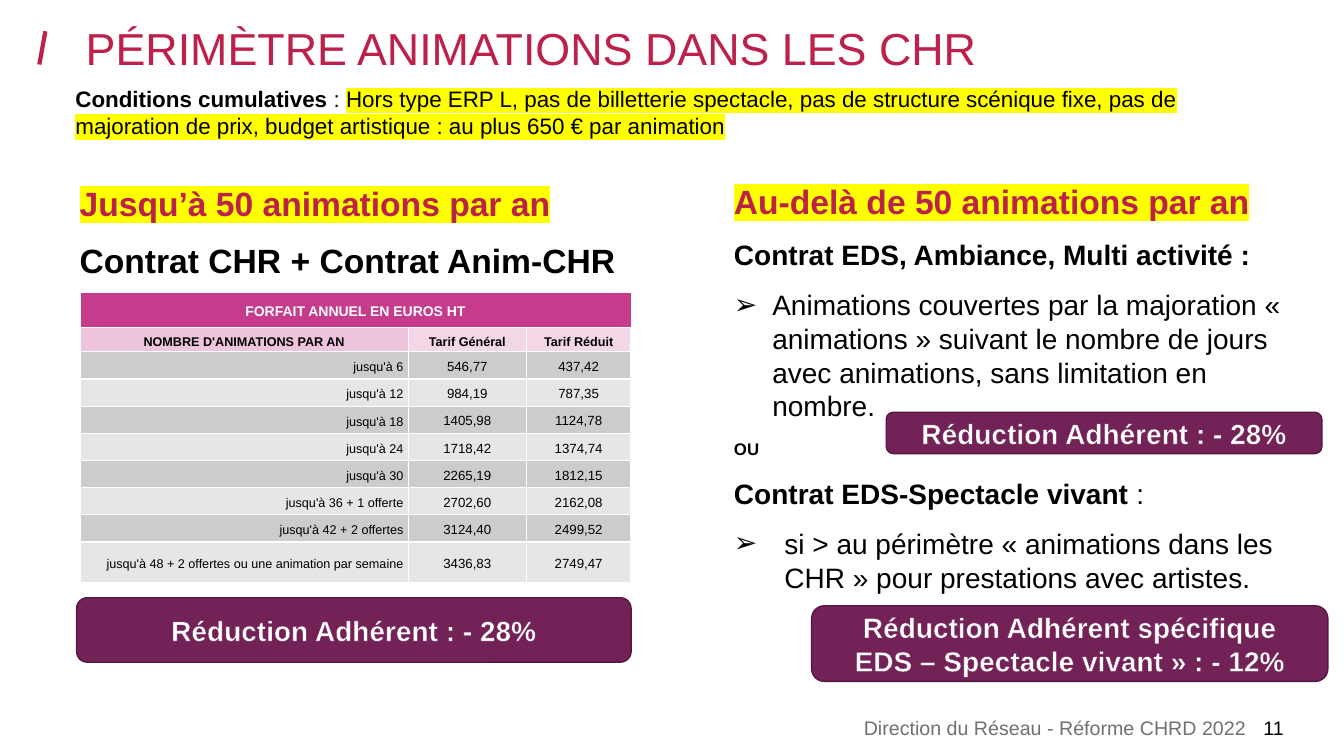
from dataclasses import dataclass

from pptx import Presentation
from pptx import util as u
from pptx.dml.color import RGBColor
from pptx.enum import shapes, text
from pptx.oxml import ns, xmlchemy

PX = 9144


@dataclass(frozen=True)
class Theme:
    font: str = "Arial"
    crimson: str = "BC204B"
    heading: str = "BC214A"
    black: str = "000000"
    white: str = "FFFFFF"
    grey: str = "6F7072"
    yellow: str = "FFFF00"
    plum: str = "722257"
    plum_edge: str = "541940"
    table_title: str = "C63B8B"
    label_head: str = "EEC4DC"
    price_head: str = "F3D7E7"
    bands: tuple = ("CCCCCC", "E6E6E6")
    title: float = 32
    section: float = 24
    body: float = 20
    condition: float = 16
    footer: float = 14
    small: float = 12
    table_head: float = 10
    table_label: float = 9
    table_price: float = 9.5


THEME = Theme()
HEADING = dict(size=THEME.section, color=THEME.heading, bold=True, highlight=THEME.yellow)
BOLD = dict(size=THEME.body, bold=True)
PLAIN = dict(size=THEME.body)
MEMBER_DISCOUNT = "Réduction Adhérent : - 28%"
RATES = [
    ("jusqu'à 6", "546,77", "437,42"),
    ("jusqu'à 12", "984,19", "787,35"),
    ("jusqu'à 18", "1405,98", "1124,78"),
    ("jusqu'à 24", "1718,42", "1374,74"),
    ("jusqu'à 30", "2265,19", "1812,15"),
    ("jusqu'à 36 + 1 offerte", "2702,60", "2162,08"),
    ("jusqu'à 42 + 2 offertes", "3124,40", "2499,52"),
    ("jusqu'à 48 + 2 offertes ou une animation par semaine", "3436,83", "2749,47"),
]


def px(*lengths):
    return [u.Emu(length * PX) for length in lengths]


def set_values(target, values):
    for name, value in values.items():
        setattr(target, name, value)


def add_xml(parent, tag, **attributes):
    element = xmlchemy.OxmlElement(tag)
    for name, value in attributes.items():
        element.set(name, str(value))
    parent.append(element)
    return element


def add_solid(parent, color):
    add_xml(add_xml(parent, "a:solidFill"), "a:srgbClr", val=color)


def add_run(paragraph, words, size, color=THEME.black, bold=False, highlight=None, outline=None):
    run = paragraph.add_run()
    run.text = words
    set_values(run.font, dict(size=u.Pt(size), bold=bold))
    run.font.color.rgb = RGBColor.from_string(color)
    properties = run.font.fill._xPr
    if highlight:
        add_xml(add_xml(properties, "a:highlight"), "a:srgbClr", val=highlight)
    if outline:
        line = add_xml(properties, "a:ln", w=6600)
        add_solid(line, outline)
        properties.insert(0, line)
    run.font.name = THEME.font


def write(frame, paragraphs, gap=0):
    for index, (runs, values, indent) in enumerate(paragraphs):
        paragraph = frame.add_paragraph() if index else frame.paragraphs[0]
        set_values(paragraph, values)
        if index and gap:
            paragraph.space_before = u.Pt(gap)
        if indent:
            properties = paragraph._p.get_or_add_pPr()
            properties.set("marL", str(indent * PX))
            properties.set("indent", str(-indent * PX))
            add_xml(properties, "a:buFont", typeface=THEME.font)
            add_xml(properties, "a:buChar", char="➢")
        for words, style in runs:
            for number, line in enumerate(words.split("\n")):
                if number:
                    paragraph.add_line_break()
                add_run(paragraph, line, **style)


def line_of(words, style, indent=0, **values):
    return [(words, style)], values, indent


def add_text(slide, box, paragraphs, gap=0, inset=(0, 0)):
    frame = slide.shapes.add_textbox(*px(*box)).text_frame
    across, down = px(*inset)
    set_values(frame, dict(word_wrap=True, margin_left=across, margin_right=across,
                           margin_top=down, margin_bottom=down))
    write(frame, paragraphs, gap)


def add_badge(slide, box, words):
    badge = slide.shapes.add_shape(shapes.MSO_SHAPE.ROUNDED_RECTANGLE, *px(*box))
    badge.shadow.inherit = False
    badge.fill.solid()
    badge.fill.fore_color.rgb = RGBColor.from_string(THEME.plum)
    badge.line.color.rgb = RGBColor.from_string(THEME.plum_edge)
    badge.line.width = u.Pt(1)
    set_values(badge.text_frame, dict(word_wrap=True, vertical_anchor=text.MSO_ANCHOR.MIDDLE))
    style = dict(BOLD, color=THEME.white, outline=THEME.plum)
    write(badge.text_frame, [line_of(words, style, alignment=text.PP_ALIGN.CENTER)])


def fill_cell(cell, words, fill, style, alignment, edges):
    side, none = px(5, 0)
    set_values(cell, dict(margin_left=side, margin_right=side, margin_top=none,
                          margin_bottom=none, vertical_anchor=text.MSO_ANCHOR.MIDDLE))
    properties = cell._tc.get_or_add_tcPr()
    for edge in "LRTB":
        width = 1.5 if edge in edges else 1
        add_solid(add_xml(properties, f"a:ln{edge}", w=int(u.Pt(width))), THEME.white)
    cell.fill.solid()
    cell.fill.fore_color.rgb = RGBColor.from_string(fill)
    write(cell.text_frame, [line_of(words, style, alignment=alignment, line_spacing=u.Pt(13))])


def add_rate_table(slide, box):
    widths = [326, 117, 104]
    heights = [35, 24] + [27] * (len(RATES) - 1) + [40]
    table = slide.shapes.add_table(len(heights), len(widths), *px(*box)).table
    for column, width in zip(table.columns, px(*widths)):
        column.width = width
    for row, height in zip(table.rows, px(*heights)):
        row.height = height
    center, right = text.PP_ALIGN.CENTER, text.PP_ALIGN.RIGHT
    table.cell(0, 0).merge(table.cell(0, 2))
    fill_cell(table.cell(0, 0), "FORFAIT ANNUEL EN EUROS HT", THEME.table_title,
              dict(size=THEME.table_head, color=THEME.white, bold=True), center, "L")
    edges = ("L", "", "R")
    headers = ("NOMBRE D'ANIMATIONS PAR AN", "Tarif Général", "Tarif Réduit")
    for column, words in enumerate(headers):
        fill = THEME.price_head if column else THEME.label_head
        style = dict(size=THEME.table_label, bold=True)
        fill_cell(table.cell(1, column), words, fill, style, center, edges[column])
    for row, rate in enumerate(RATES):
        for column, words in enumerate(rate):
            style = dict(size=THEME.table_price if column else THEME.table_label)
            fill_cell(table.cell(row + 2, column), words, THEME.bands[row % 2], style,
                      center if column else right, edges[column])


def add_header(slide, left, top):
    slash = slide.shapes.add_connector(shapes.MSO_CONNECTOR.STRAIGHT,
                                       *px(left, top + 33, left + 6, top))
    slash.line.color.rgb = RGBColor.from_string(THEME.crimson)
    slash.line.width = u.Pt(3)
    add_xml(slash._element.find(ns.qn("p:spPr")), "a:effectLst")
    title = dict(size=THEME.title, color=THEME.crimson)
    add_text(slide, (left + 46, top, 1203, 76),
             [line_of("PÉRIMÈTRE ANIMATIONS DANS LES CHR", title, line_spacing=0.8)])
    condition = dict(size=THEME.condition)
    runs = [
        ("Conditions cumulatives ", dict(condition, bold=True)),
        (": ", condition),
        ("Hors type ERP L, pas de billetterie spectacle, pas de structure scénique fixe, "
         "pas de majoration de prix, budget artistique : au plus 650 € par animation",
         dict(condition, highlight=THEME.yellow)),
    ]
    add_text(slide, (left + 26, top + 49, 1183, 64), [(runs, {}, 0)], inset=(10, 5))


def add_up_to_fifty(slide, left, top):
    add_text(slide, (left, top, 568, 412), [
        line_of("Jusqu’à 50 animations par an", HEADING),
        line_of("Contrat CHR + Contrat Anim-CHR", dict(size=THEME.section, bold=True)),
    ], gap=12)
    add_rate_table(slide, (left, top + 109, 547, 288))
    add_badge(slide, (left - 3, top + 412, 550, 64), MEMBER_DISCOUNT)


def add_beyond_fifty(slide, left, top):
    add_text(slide, (left, top, 547, 460), [
        line_of("Au-delà de 50 animations par an", HEADING),
        line_of("Contrat EDS, Ambiance, Multi activité :", BOLD),
        line_of("Animations couvertes par la majoration « animations » suivant le nombre "
                "de jours avec animations, sans limitation en nombre.", PLAIN, indent=38),
        line_of("OU", dict(size=THEME.small, bold=True)),
        ([("Contrat EDS-Spectacle vivant", BOLD), (" :", PLAIN)], {}, 0),
        line_of("si > au périmètre « animations dans les CHR » pour prestations "
                "avec artistes.", PLAIN, indent=50),
    ], gap=12)
    add_badge(slide, (left + 151, top + 230, 432, 41), MEMBER_DISCOUNT)
    add_badge(slide, (left + 77, top + 422, 512, 75),
              "Réduction Adhérent spécifique\nEDS – Spectacle vivant » : - 12%")


def add_footer(slide, left, top):
    style = dict(size=THEME.footer)
    add_text(slide, (left, top, 512, 24), [
        line_of("Direction du Réseau - Réforme CHRD 2022", dict(style, color=THEME.grey),
                alignment=text.PP_ALIGN.RIGHT)])
    add_text(slide, (left + 529, top, 44, 24), [line_of("11", style)])


def main():
    presentation = Presentation()
    presentation.slide_width, presentation.slide_height = px(1333, 750)
    slide = presentation.slides.add_slide(presentation.slide_layouts[6])
    add_header(slide, 39, 31)
    add_up_to_fifty(slide, 79, 181)
    add_beyond_fifty(slide, 728, 179)
    add_footer(slide, 724, 710)
    presentation.save("out.pptx")


if __name__ == "__main__":
    main()
